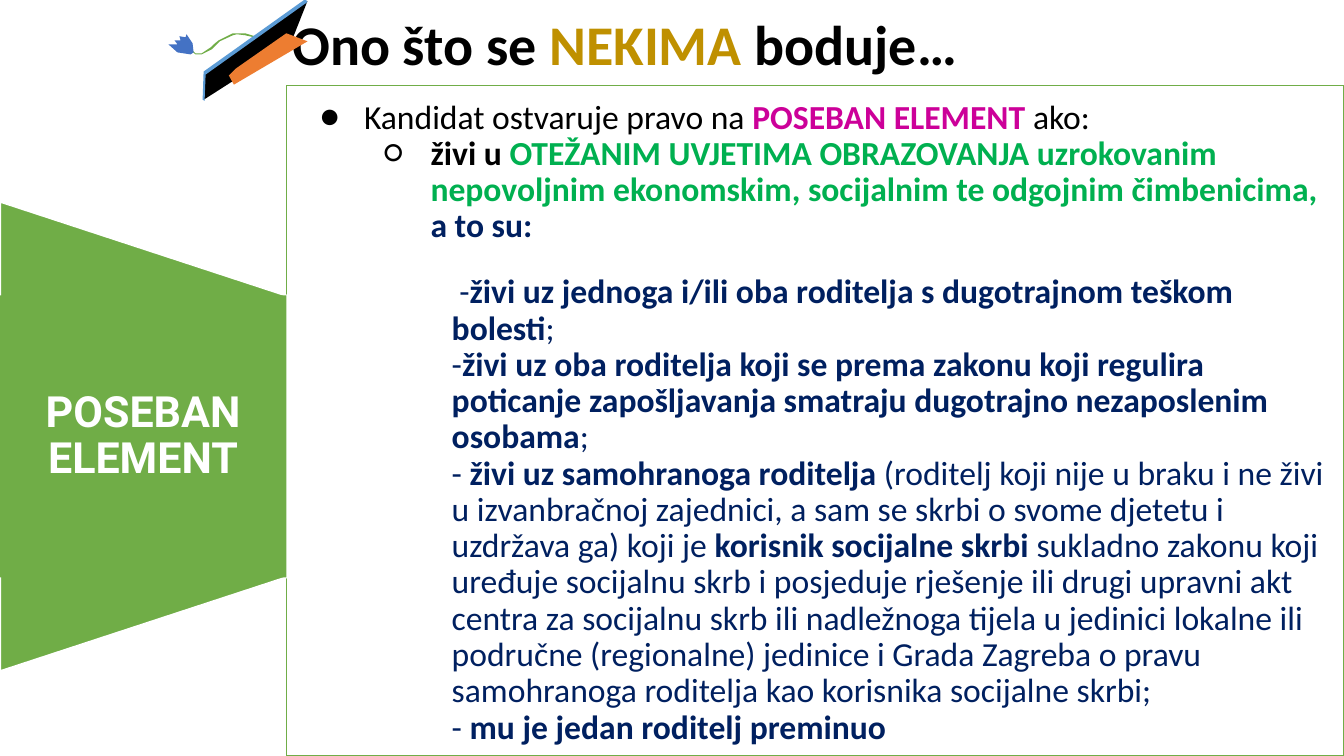
from lxml.etree import SubElement
from pptx import Presentation
from pptx.dml.color import RGBColor
from pptx.enum.shapes import MSO_SHAPE
from pptx.enum.text import MSO_ANCHOR, MSO_AUTO_SIZE, PP_ALIGN
from pptx.oxml.ns import qn
from pptx.util import Pt

PX = 9144  # one px is a hundredth of an inch

BLACK = RGBColor(0x00, 0x00, 0x00)
WHITE = RGBColor(0xFF, 0xFF, 0xFF)
GREEN = RGBColor(0x70, 0xAD, 0x47)
LEAF = RGBColor(0x00, 0xB0, 0x50)
NAVY = RGBColor(0x00, 0x20, 0x60)
PINK = RGBColor(0xCC, 0x00, 0x99)
GOLD = RGBColor(0xBF, 0x90, 0x00)
BLUE = RGBColor(0x44, 0x72, 0xC4)
SKY = RGBColor(0x5B, 0x9B, 0xD5)
ORANGE = RGBColor(0xED, 0x7D, 0x31)


def write(para, text, font="Calibri", size=24, color=BLACK, bold=False):
    """Add text to a paragraph; each newline becomes a line break."""
    for i, part in enumerate(text.split("\n")):
        if i:
            para.add_line_break()
        if part:
            run = para.add_run()
            run.text = part
            run.font.name = font
            run.font.size = Pt(size)
            run.font.bold = bold
            run.font.color.rgb = color


class Deck:
    def __init__(self, wide, high):
        self.prs = Presentation()
        self.prs.slide_width = wide * PX
        self.prs.slide_height = high * PX
        self.slide = self.prs.slides.add_slide(self.prs.slide_layouts[1])
        self.shapes = self.slide.shapes

    def place(self, shape, x, y, w, h):
        shape.left, shape.top = x * PX, y * PX
        shape.width, shape.height = w * PX, h * PX

    def paint(self, shape, fill, line=None, width=1):
        shape.fill.solid()
        shape.fill.fore_color.rgb = fill
        if line is None:
            shape.line.fill.background()
        else:
            shape.line.color.rgb = line
            shape.line.width = Pt(width)

    def frame(self, shape, side=10, edge=10, anchor=MSO_ANCHOR.MIDDLE):
        frame = shape.text_frame
        frame.word_wrap = True
        frame.auto_size = MSO_AUTO_SIZE.NONE
        frame.vertical_anchor = anchor
        frame.margin_left = frame.margin_right = side * PX
        frame.margin_top = frame.margin_bottom = edge * PX
        return frame

    def title(self, box, runs):
        shape = self.shapes.title
        self.place(shape, *box)
        para = self.frame(shape).paragraphs[0]
        para.alignment = PP_ALIGN.CENTER
        para.line_spacing = 0.9
        for text, color in runs:
            write(para, text, size=40, color=color, bold=True)

    def body(self, box, items):
        shape = self.slide.placeholders[1]
        self.place(shape, *box)
        self.paint(shape, WHITE, GREEN)
        frame = self.frame(shape, anchor=MSO_ANCHOR.TOP)
        for i, (left, hang, mark, pitch, gap, runs) in enumerate(items):
            para = frame.add_paragraph() if i else frame.paragraphs[0]
            para.level = i
            para.alignment = PP_ALIGN.LEFT
            para.line_spacing = pitch
            para.space_before = Pt(gap)
            self.bullet(para, left, hang, mark)
            for text, color, bold in runs:
                write(para, text, color=color, bold=bold)

    def bullet(self, para, left, hang, mark):
        props = para._p.get_or_add_pPr()
        props.set("marL", str(left * PX))
        props.set("indent", str(-hang * PX))
        if not mark:
            SubElement(props, qn("a:buNone"))
            return
        tint = SubElement(props, qn("a:buClr"))
        SubElement(tint, qn("a:srgbClr")).set("val", str(BLACK))
        SubElement(props, qn("a:buFont")).set("typeface", "Calibri")
        SubElement(props, qn("a:buChar")).set("char", mark)

    def block(self, kind, box, fill, line=None, width=1, turn=0):
        shape = self.shapes.add_shape(kind, *(n * PX for n in box))
        shape.shadow.inherit = False
        shape.rotation = turn
        self.paint(shape, fill, line, width)
        return shape

    def label(self, shape, text, **style):
        para = self.frame(shape, side=21, edge=0).paragraphs[0]
        para.alignment = PP_ALIGN.CENTER
        para.line_spacing = 0.9
        write(para, text, **style)

    def outline(self, fill, points):
        pen = self.shapes.build_freeform(*points[0], scale=PX)
        pen.add_line_segments(points[1:], close=True)
        shape = pen.convert_to_shape()
        shape.shadow.inherit = False
        self.paint(shape, fill)


def main():
    deck = Deck(1333, 750)

    # Title and criteria list
    deck.title((117, 27, 1005, 40), [
        ("Ono što se ", BLACK), ("NEKIMA", GOLD), (" boduje…", BLACK)])
    deck.body((284, 85, 1049, 665), [
        (67, 44, "●", 1.0, 0, [
            ("Kandidat ostvaruje pravo na ", BLACK, False),
            ("POSEBAN ELEMENT ", PINK, True),
            ("ako:", BLACK, False)]),
        (133, 46, "○", 0.9, 0, [
            ("živi u ", BLACK, True),
            ("OTEŽANIM UVJETIMA OBRAZOVANJA uzrokovanim nepovoljnim "
             "ekonomskim, socijalnim te odgojnim čimbenicima, ", LEAF, True),
            ("a to su:", NAVY, True)]),
        (154, 0, None, 0.9, 21.3, [
            (" -", NAVY, False),
            ("živi uz jednoga i/ili oba roditelja s dugotrajnom teškom "
             "bolesti", NAVY, True),
            (";\n-", NAVY, False),
            ("živi uz oba roditelja koji se prema zakonu koji regulira "
             "poticanje zapošljavanja smatraju dugotrajno nezaposlenim "
             "osobama", NAVY, True),
            (";\n- ", NAVY, False),
            ("živi uz samohranoga roditelja ", NAVY, True),
            ("(roditelj koji nije u braku i ne živi u izvanbračnoj "
             "zajednici, a sam se skrbi o svome djetetu i uzdržava ga) "
             "koji je ", NAVY, False),
            ("korisnik socijalne skrbi ", NAVY, True),
            ("sukladno zakonu koji uređuje socijalnu skrb i posjeduje "
             "rješenje ili drugi upravni akt centra za socijalnu skrb ili "
             "nadležnoga tijela u jedinici lokalne ili područne "
             "(regionalne) jedinice i Grada Zagreba o pravu samohranoga "
             "roditelja kao korisnika socijalne skrbi; \n- ", NAVY, False),
            ("mu je jedan roditelj preminuo", NAVY, True)]),
    ])

    # Side banner
    deck.block(MSO_SHAPE.FLOWCHART_MANUAL_OPERATION, (-91, 291, 466, 284),
               GREEN, WHITE, 1.5, turn=270)
    panel = deck.block(MSO_SHAPE.RECTANGLE, (0, 293, 284, 280), GREEN)
    deck.label(panel, "POSEBAN ELEMENT", font="Roboto", size=30.7,
               color=WHITE, bold=True)

    # Graduation cap: cord, tassel, side, rim, base
    deck.outline(GREEN, [
        (231, 33), (235, 33), (243, 33), (253, 36), (252, 37), (243, 35),
        (235, 34), (231, 35), (218, 41), (214, 45), (210, 49), (200, 54),
        (194, 54), (189, 50), (191, 50), (194, 53), (200, 53), (209, 47),
        (212, 44), (217, 40)])
    deck.outline(BLUE, [
        (185, 34), (191, 43), (192, 52), (189, 54), (176, 52), (167, 44),
        (176, 44), (173, 40), (179, 40), (178, 36), (184, 37)])
    deck.outline(BLACK, [(305, 1), (288, 44), (202, 99), (203, 73)])
    deck.outline(SKY, [
        (303, -1), (305, 2), (204, 74), (203, 100), (201, 99), (202, 71)])
    deck.outline(ORANGE, [
        (284, 33), (305, 41), (232, 84), (227, 75), (234, 68)])

    deck.prs.save("out.pptx")


if __name__ == "__main__":
    main()
